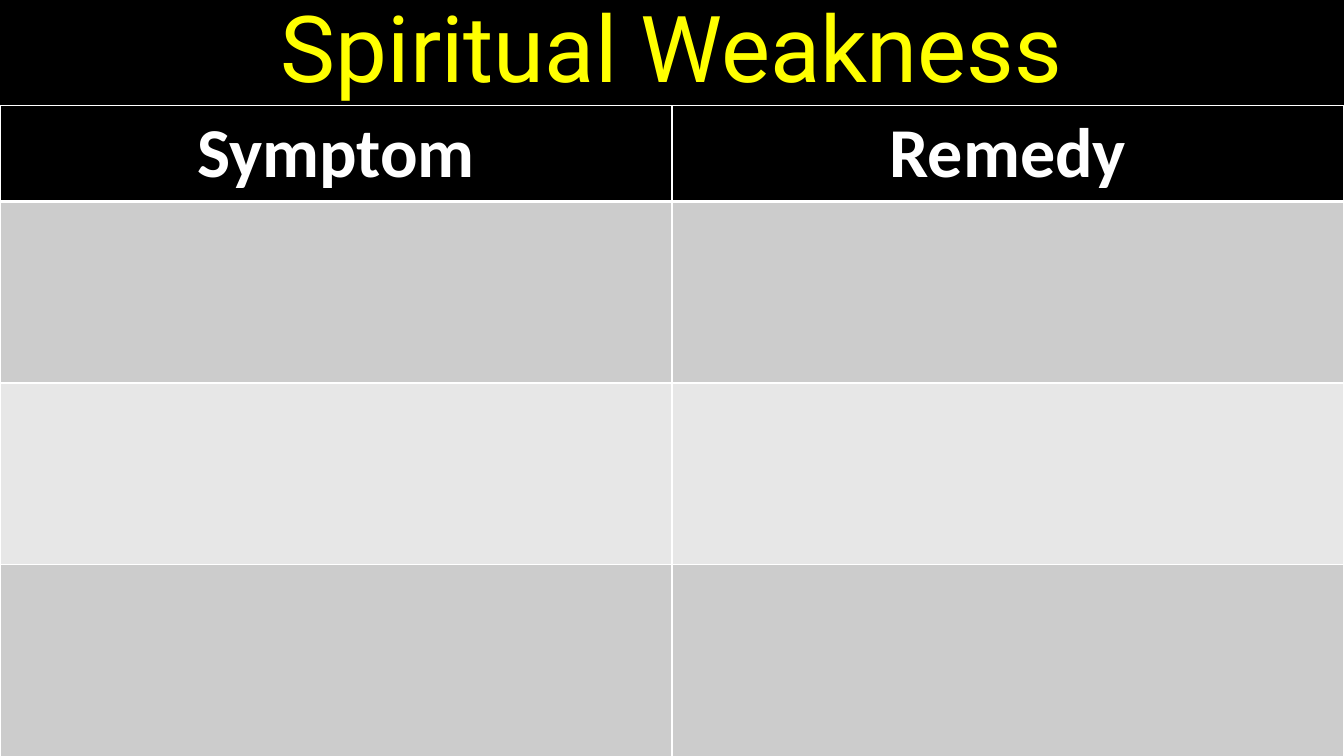
from lxml import etree
from pptx import Presentation
from pptx import util as u
from pptx.dml.color import RGBColor
from pptx.enum import text
from pptx.oxml.ns import qn

BLACK = RGBColor(0x00, 0x00, 0x00)
WHITE = RGBColor(0xFF, 0xFF, 0xFF)
YELLOW = RGBColor(0xFF, 0xFF, 0x00)
GREY = RGBColor(0xCC, 0xCC, 0xCC)
PALE_GREY = RGBColor(0xE7, 0xE7, 0xE7)

TITLE_SHARE = 0.14
ROW_SHARES = (0.12, 0.24, 0.24, 0.28)
HEADINGS = ("Symptom", "Remedy")


class Deck:
    TITLE = dict(name="Roboto", size=u.Pt(66), bold=False)
    HEADING = dict(name="Calibri", size=u.Pt(50), bold=True)

    def __init__(self):
        self.prs = Presentation()
        self.prs.slide_width, self.prs.slide_height = u.Inches(13.33), u.Inches(7.5)
        self.s = self.prs.slides.add_slide(self.prs.slide_layouts[5])

    def x(self, share):
        return round(self.prs.slide_width * share)

    def y(self, share):
        return round(self.prs.slide_height * share)

    def background(self, color):
        fill = self.s.background.fill
        fill.solid()
        fill.fore_color.rgb = color

    def centred_text(self, tf, words, style, color):
        p = tf.paragraphs[0]
        p.alignment = text.PP_ALIGN.CENTER
        r = p.add_run()
        r.text = words
        for key, value in style.items():
            setattr(r.font, key, value)
        r.font.color.rgb = color
        return p

    def title(self, words, height):
        sp = self.s.shapes.title
        box = dict(left=0, top=0, width=self.x(1), height=self.y(height))
        for key, value in box.items():
            setattr(sp, key, value)
        tf = sp.text_frame
        tf.auto_size = text.MSO_AUTO_SIZE.NONE
        tf.vertical_anchor = text.MSO_ANCHOR.MIDDLE
        self.centred_text(tf, words, self.TITLE, YELLOW).line_spacing = 0.9

    def paint(self, cell, color, widths):
        """Fill a cell and draw its white borders; widths maps a side to points."""
        tc_pr = cell._tc.get_or_add_tcPr()
        for side, width in widths.items():
            ln = etree.SubElement(tc_pr, qn(f"a:ln{side}"), w=str(u.Pt(width)))
            solid = etree.SubElement(ln, qn("a:solidFill"))
            etree.SubElement(solid, qn("a:srgbClr"), val=str(WHITE))
        cell.fill.solid()
        cell.fill.fore_color.rgb = color

    def table(self, headings, row_shares, top):
        n_rows, n_cols = len(row_shares), len(headings)
        frame = self.s.shapes.add_table(n_rows, n_cols, 0, self.y(top),
                                        self.x(1), self.y(sum(row_shares)))
        table = frame.table
        for column in table.columns:
            column.width = self.x(1 / n_cols)
        for i, share in enumerate(row_shares):
            table.rows[i].height = self.y(share)
            color = BLACK if i == 0 else GREY if i % 2 else PALE_GREY
            widths = dict(L=1, R=1, T=3 if i == 1 else 1, B=3 if i == 0 else 1)
            for cell in table.rows[i].cells:
                self.paint(cell, color, widths)
        for cell, heading in zip(table.rows[0].cells, headings):
            self.centred_text(cell.text_frame, heading, self.HEADING, WHITE)


def main():
    deck = Deck()
    deck.background(BLACK)
    deck.title("Spiritual Weakness", TITLE_SHARE)
    deck.table(HEADINGS, ROW_SHARES, TITLE_SHARE)
    deck.prs.save("out.pptx")


if __name__ == "__main__":
    main()
